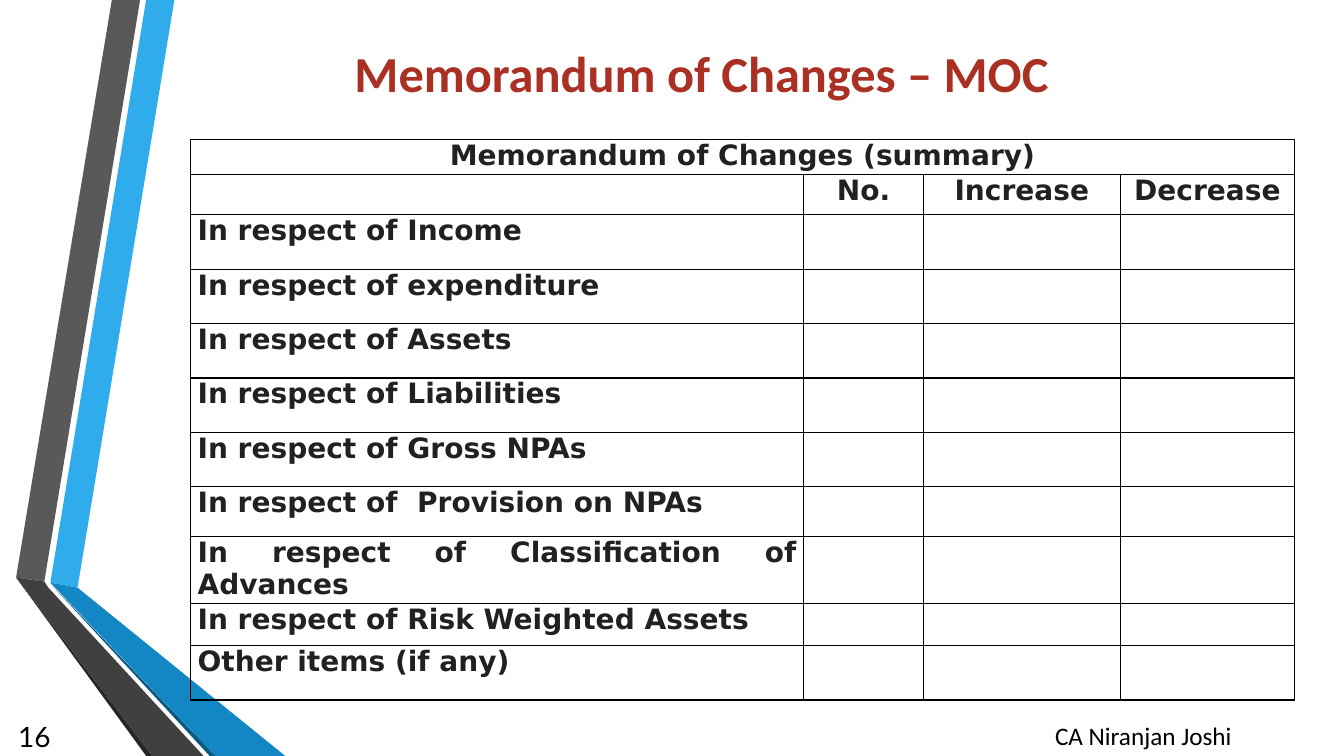
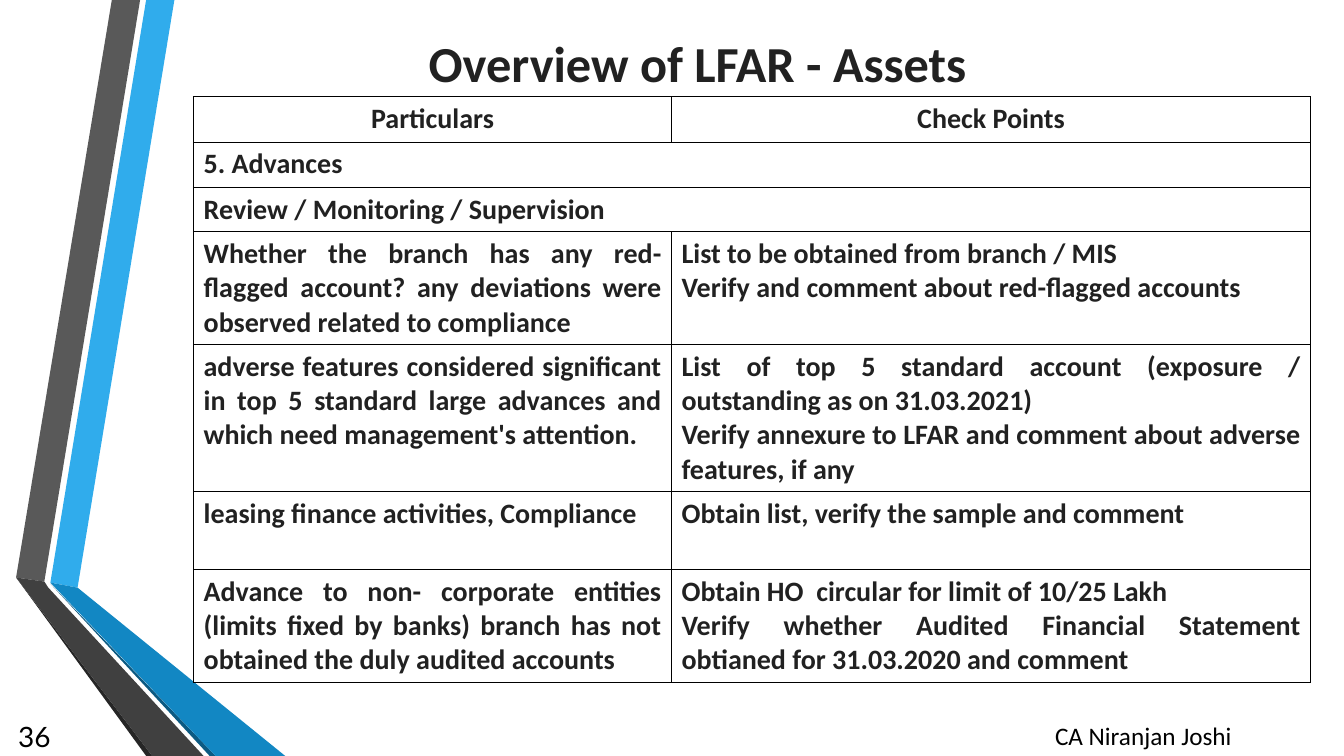
from pptx import Presentation
from pptx.dml.color import RGBColor
from pptx.enum import text as t
from pptx.oxml import parse_xml
from pptx.oxml.ns import nsdecls
from pptx.util import Inches, Pt

HUES = {
    "sky": "30ACEC", "blue": "1287C3", "navy": "0C5A82",
    "gray": "595959", "dark": "404040", "coal": "262626",
    "red": "A93023", "ink": "212121", "black": "000000",
}
BANDS = [
    ("sky", [(0.5, 5.78), (0.77, 5.83), (1.73, 0), (1.45, 0)]),
    ("gray", [(1.39, 0), (1.11, 0), (0.16, 5.73), (0.44, 5.77)]),
    ("coal", [(0.16, 5.73), (1.45, 7.5), (1.51, 7.5)]),
    ("navy", [(0.5, 5.79), (2.08, 7.5), (2.14, 7.5)]),
    ("blue", [(0.5, 5.78), (2.14, 7.5), (2.83, 7.5), (0.77, 5.83)]),
    ("dark", [(2.02, 7.5), (0.48, 5.83), (0.44, 5.77), (0.16, 5.73), (1.51, 7.5)]),
]
MOC = [
    ("Memorandum of Changes (summary)",),
    ("", "No.", "Increase", "Decrease"),
] + [(name, "", "", "") for name in (
    "In respect of Income",
    "In respect of expenditure",
    "In respect of Assets",
    "In respect of Liabilities",
    "In respect of Gross NPAs",
    "In respect of  Provision on NPAs",
    "In respect of Classification of Advances",
    "In respect of Risk Weighted Assets",
    "Other items (if any)",
)]
LFAR = [
    ("Particulars", "Check Points"),
    ("5. Advances",),
    ("Review / Monitoring / Supervision",),
    ("Whether the branch has any red-flagged account? any deviations were "
     "observed related to compliance",
     "List to be obtained from branch / MIS\n"
     "Verify and comment about red-flagged accounts"),
    ("adverse features considered significant in top 5 standard large advances "
     "and which need management's attention.",
     "List of top 5 standard account (exposure / outstanding as on 31.03.2021)\n"
     "Verify annexure to LFAR and comment about adverse features, if any"),
    ("leasing finance activities, Compliance",
     "Obtain list, verify the sample and comment"),
    ("Advance to non- corporate entities (limits fixed by banks) branch has not "
     "obtained the duly audited accounts",
     "Obtain HO  circular for limit of 10/25 Lakh\n"
     "Verify whether Audited Financial Statement obtianed for 31.03.2020 and comment"),
]


def hue(key):
    """Return a named colour."""
    return RGBColor.from_string(HUES[key])


def style(frame, align, size, face, color, bold=False):
    """Format every paragraph of a text frame."""
    for para in frame.paragraphs:
        para.alignment = align
        font = para.font
        font.size, font.name, font.bold = Pt(size), face, bold
        font.color.rgb = hue(color)


def label(slide, box, words, size, face="Calibri", color="black", bold=False,
          align=t.PP_ALIGN.CENTER, anchor=t.MSO_ANCHOR.MIDDLE):
    """Place one line of text in a box."""
    frame = slide.shapes.add_textbox(*map(Inches, box)).text_frame
    frame.word_wrap = True
    frame.vertical_anchor = anchor
    frame.text = words
    style(frame, align, size, face, color, bold)


def bands(slide):
    """Draw the folded ribbons at the left edge."""
    for color, points in BANDS:
        first, *rest = [(Inches(x), Inches(y)) for x, y in points]
        path = slide.shapes.build_freeform(*first)
        path.add_line_segments(rest, close=True)
        shape = path.convert_to_shape()
        shape.shadow.inherit = False
        shape.fill.solid()
        shape.fill.fore_color.rgb = hue(color)
        shape.line.fill.background()


def border(cell):
    """Rule all four sides of a cell."""
    props = cell._tc.get_or_add_tcPr()
    for side in "LRTB":
        props.append(parse_xml(
            f'<a:ln{side} {nsdecls("a")} w="12700"><a:solidFill>'
            f'<a:srgbClr val="{HUES["black"]}"/></a:solidFill></a:ln{side}>'))


def grid(slide, spot, cols, highs, rows, heads, face, pad):
    """Place a ruled table whose one-item rows span its full width."""
    size = sum(cols), sum(highs)
    table = slide.shapes.add_table(
        len(rows), len(cols), *map(Inches, (*spot, *size))).table
    table.first_row = table.horz_banding = False
    for col, width in zip(table.columns, cols):
        col.width = Inches(width)
    for num, (row, high, words) in enumerate(zip(table.rows, highs, rows)):
        row.height = Inches(high)
        align = t.PP_ALIGN.CENTER if num < heads else t.PP_ALIGN.JUSTIFY
        for cell in row.cells:
            border(cell)
            cell.fill.background()
            cell.margin_left = cell.margin_right = Inches(pad[0])
            cell.margin_top = cell.margin_bottom = Inches(pad[1])
        if len(words) == 1:
            table.cell(num, 0).merge(table.cell(num, len(cols) - 1))
        for cell, item in zip(row.cells, words):
            cell.text = item
            style(cell.text_frame, align, 20, face, "ink", True)


def page(deck, number, title, box, color):
    """Add a slide with ribbons, title and footer."""
    slide = deck.slides.add_slide(deck.slide_layouts[6])
    bands(slide)
    label(slide, box, title, 36, color=color, bold=True)
    label(slide, (9.59, 7.1, 3.5, 0.4), "CA Niranjan Joshi", 18,
          anchor=t.MSO_ANCHOR.TOP)
    label(slide, (0, 7.1, 0.6, 0.4), str(number), 20, "Lato",
          align=t.PP_ALIGN.RIGHT)
    return slide


def main():
    """Build and save the deck."""
    deck = Presentation()
    deck.slide_width, deck.slide_height = Inches(13.33), Inches(7.5)
    slide = page(deck, 16, "Memorandum of Changes – MOC",
                 (1.89, 0.37, 10.14, 0.69), "red")
    grid(slide, (1.89, 1.38), (6.08, 1.19, 1.95, 1.73),
         [0.35, 0.4] + [0.54] * 5 + [0.49, 0.65, 0.42, 0.54],
         MOC, 2, "DejaVu Sans", (0.07, 0))
    slide = page(deck, 36, "Overview of LFAR - Assets",
                 (2.42, 0.25, 9, 0.74), "ink")
    grid(slide, (1.92, 0.96), (4.74, 6.34),
         (0.45, 0.45, 0.44, 1.12, 1.46, 0.77, 1.12),
         LFAR, 1, "Calibri", (0.1, 0.05))
    deck.save("out.pptx")


if __name__ == "__main__":
    main()
